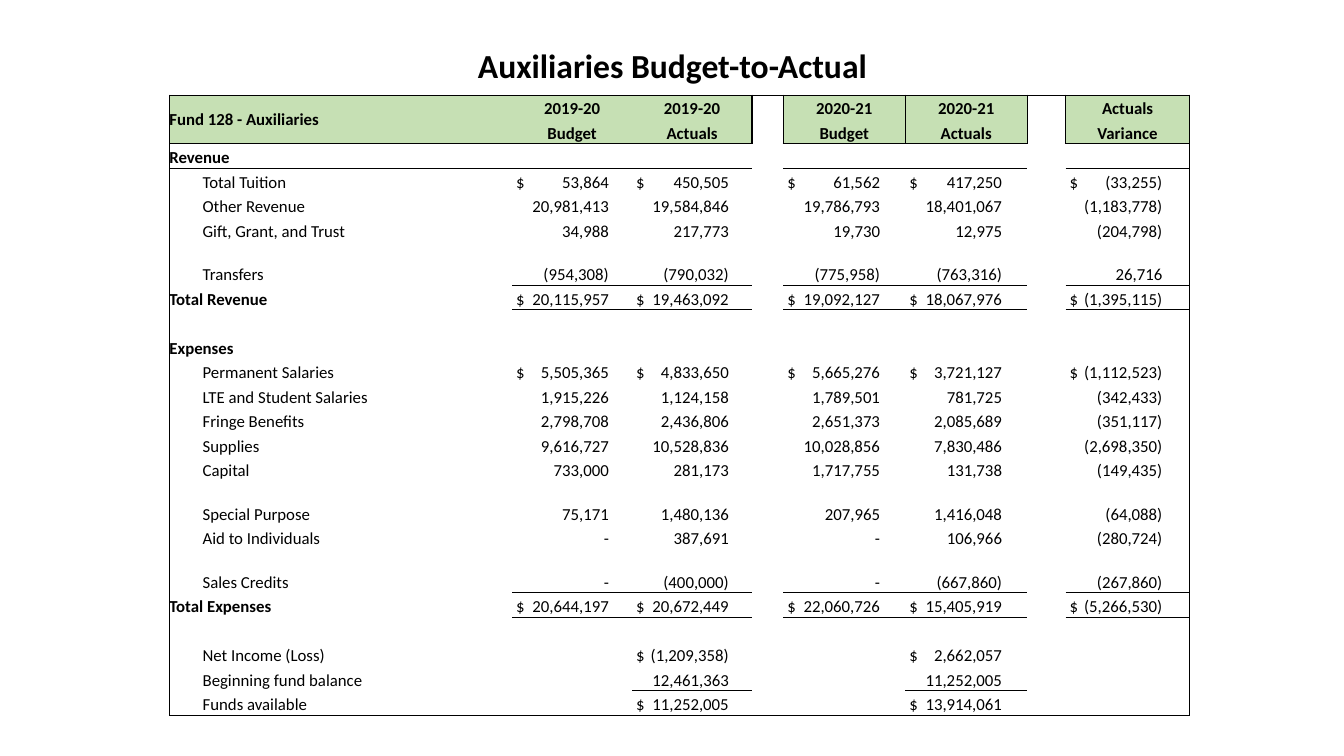
"""Build the Auxiliaries budget-to-actual slide."""
from lxml.etree import SubElement
from pptx import Presentation
from pptx.dml.color import RGBColor
from pptx.enum.text import MSO_ANCHOR as Anchor, PP_ALIGN as Align
from pptx.oxml.ns import qn
from pptx.util import Inches, Pt

TITLE = "Auxiliaries Budget-to-Actual"
HEADS = [
    ("Fund 128 - Auxiliaries", "2019-20", "2019-20", "2020-21", "2020-21", "Actuals"),
    ("", "Budget", "Actuals", "Budget", "Actuals", "Variance"),
]
BODY = [
    ("Revenue",),
    ("Total Tuition", "$ 53,864", "$ 450,505", "$ 61,562", "$ 417,250", "$ (33,255)"),
    ("Other Revenue", "20,981,413", "19,584,846", "19,786,793", "18,401,067", "(1,183,778)"),
    ("Gift, Grant, and Trust", "34,988", "217,773", "19,730", "12,975", "(204,798)"),
    ("Transfers", "(954,308)", "(790,032)", "(775,958)", "(763,316)", "26,716"),
    ("Total Revenue", "$ 20,115,957", "$ 19,463,092", "$ 19,092,127", "$ 18,067,976",
     "$ (1,395,115)"),
    (),
    ("Expenses",),
    ("Permanent Salaries", "$ 5,505,365", "$ 4,833,650", "$ 5,665,276", "$ 3,721,127",
     "$ (1,112,523)"),
    ("LTE and Student Salaries", "1,915,226", "1,124,158", "1,789,501", "781,725", "(342,433)"),
    ("Fringe Benefits", "2,798,708", "2,436,806", "2,651,373", "2,085,689", "(351,117)"),
    ("Supplies", "9,616,727", "10,528,836", "10,028,856", "7,830,486", "(2,698,350)"),
    ("Capital", "733,000", "281,173", "1,717,755", "131,738", "(149,435)"),
    ("Special Purpose", "75,171", "1,480,136", "207,965", "1,416,048", "(64,088)"),
    ("Aid to Individuals", "-", "387,691", "-", "106,966", "(280,724)"),
    ("Sales Credits", "-", "(400,000)", "-", "(667,860)", "(267,860)"),
    ("Total Expenses", "$ 20,644,197", "$ 20,672,449", "$ 22,060,726", "$ 15,405,919",
     "$ (5,266,530)"),
    (),
    ("Net Income (Loss)", "", "$ (1,209,358)", "", "$ 2,662,057"),
    ("Beginning fund balance", "", "12,461,363", "", "11,252,005"),
    ("Funds available", "", "$ 11,252,005", "", "$ 13,914,061"),
]
BOLD = {"Revenue", "Total Revenue", "Expenses", "Total Expenses"}
TALL = {"Transfers", "Special Purpose", "Sales Credits"}
RULED = {"Transfers": (2, 3, 5, 6, 8), "Sales Credits": (2, 3, 5, 6, 8),
         "Beginning fund balance": (3, 6)}
WIDTHS = [0.33, 3.07, 1.19, 1.19, 0.31, 1.21, 1.21, 0.38, 1.23]
MONEY = [2, 3, 5, 6, 8]
GAPS = (4, 7)
GREEN, BLACK = "C6E0B4", "000000"
LEFT, TOP, WIDE, HIGH, TALL_ROW = 1.68, 0.94, 10.1, 6.16, 0.43
PAD, STOP = 0.04, 0.96
PLAIN = "{2D5ABB26-0587-4C30-8999-92F81FD0307C}"

ROWS = HEADS + BODY
LAST = len(ROWS) - 1
SHORT_ROW = (HIGH - len(TALL) * TALL_ROW) / (len(ROWS) - len(TALL))


def color(code):
    return RGBColor.from_string(code)


def style(para, size, bold):
    font = para.font
    font.name, font.size, font.bold = "Calibri", Pt(size), bold
    font.color.rgb = color(BLACK)


def edges(row, col):
    """Give the border widths of one cell, in points."""
    found = {}
    head = row < len(HEADS)
    if col == 0:
        found["L"] = 0.25
    elif head and (col in GAPS or col - 1 in GAPS):
        found["L"] = 1
    if col == 8:
        found["R"] = 0.25
    elif head and (col in GAPS or col + 1 in GAPS):
        found["R"] = 1
    if row == 0:
        found["T"] = 0.25
    elif row == 2 and col not in GAPS:
        found["T"] = 1
    elif row > 2 and col in RULED.get((ROWS[row - 1] or ("",))[0], ()):
        found["T"] = 0.5
    if row == LAST:
        found["B"] = 0.25
    elif (row == 1 or (row == 0 and col < 2)) and col not in GAPS:
        found["B"] = 1
    elif ROWS[row] and col in RULED.get(ROWS[row][0], ()):
        found["B"] = 0.5
    return found


def border(cell, found):
    props = cell._tc.get_or_add_tcPr()
    for side in "LRTB":
        if side in found:
            line = SubElement(props, qn("a:ln" + side), w=str(Pt(found[side])))
            fill = SubElement(line, qn("a:solidFill"))
            SubElement(fill, qn("a:srgbClr"), val=BLACK)


def tab(para, pos):
    stops = SubElement(para._p.get_or_add_pPr(), qn("a:tabLst"))
    SubElement(stops, qn("a:tab"), pos=str(Inches(pos)), algn="r")


def write(cell, text, row, col):
    head = row < len(HEADS)
    para = cell.text_frame.paragraphs[0]
    if not text:
        SubElement(para._p, qn("a:endParaRPr"), sz="1200")
        return
    if col in MONEY and head:
        para.alignment = Align.CENTER
    elif text.startswith("$"):
        cell.margin_left = Inches(PAD)
        tab(para, STOP - PAD)
    elif col in MONEY:
        para.alignment = Align.RIGHT
        cell.margin_right = Inches(WIDTHS[col] - STOP)
    para.text = text.replace("$ ", "$\t")
    style(para, 12, head or text in BOLD)


def main():
    deck = Presentation()
    deck.slide_width, deck.slide_height = Inches(13.33), Inches(7.5)
    slide = deck.slides.add_slide(deck.slide_layouts[5])

    title = slide.shapes.title
    title.left, title.top = Inches(0.92), Inches(0.4)
    title.width, title.height = Inches(11.5), Inches(0.54)
    title.text_frame.text = TITLE
    title.text_frame.vertical_anchor = Anchor.MIDDLE
    para = title.text_frame.paragraphs[0]
    para.alignment, para.line_spacing = Align.CENTER, 0.9
    style(para, 24, True)

    frame = slide.shapes.add_table(len(ROWS), len(WIDTHS), Inches(LEFT), Inches(TOP),
                                   Inches(WIDE), Inches(HIGH))
    table = frame.table
    table.first_row = table.horz_banding = False
    next(frame._element.iter(qn("a:tableStyleId"))).text = PLAIN
    for col, width in enumerate(WIDTHS):
        table.columns[col].width = Inches(width)

    for row, items in enumerate(ROWS):
        name = items[0] if items else ""
        table.rows[row].height = Inches(TALL_ROW if name in TALL else SHORT_ROW)
        wide = row < len(HEADS) or name in BOLD
        texts = dict(zip([0 if wide else 1] + MONEY, items))
        for col in range(len(WIDTHS)):
            cell = table.cell(row, col)
            cell.margin_left = cell.margin_right = 0
            cell.margin_top = cell.margin_bottom = 0
            middle = row < len(HEADS) and col < 2
            cell.vertical_anchor = Anchor.MIDDLE if middle else Anchor.BOTTOM
            border(cell, edges(row, col))
            if row < len(HEADS) and col not in GAPS:
                cell.fill.solid()
                cell.fill.fore_color.rgb = color(GREEN)
            else:
                cell.fill.background()
            write(cell, texts.get(col, ""), row, col)
        if name in BOLD:
            table.cell(row, 0).merge(table.cell(row, 1))
    table.cell(0, 0).merge(table.cell(1, 1))
    deck.save("out.pptx")


if __name__ == "__main__":
    main()
